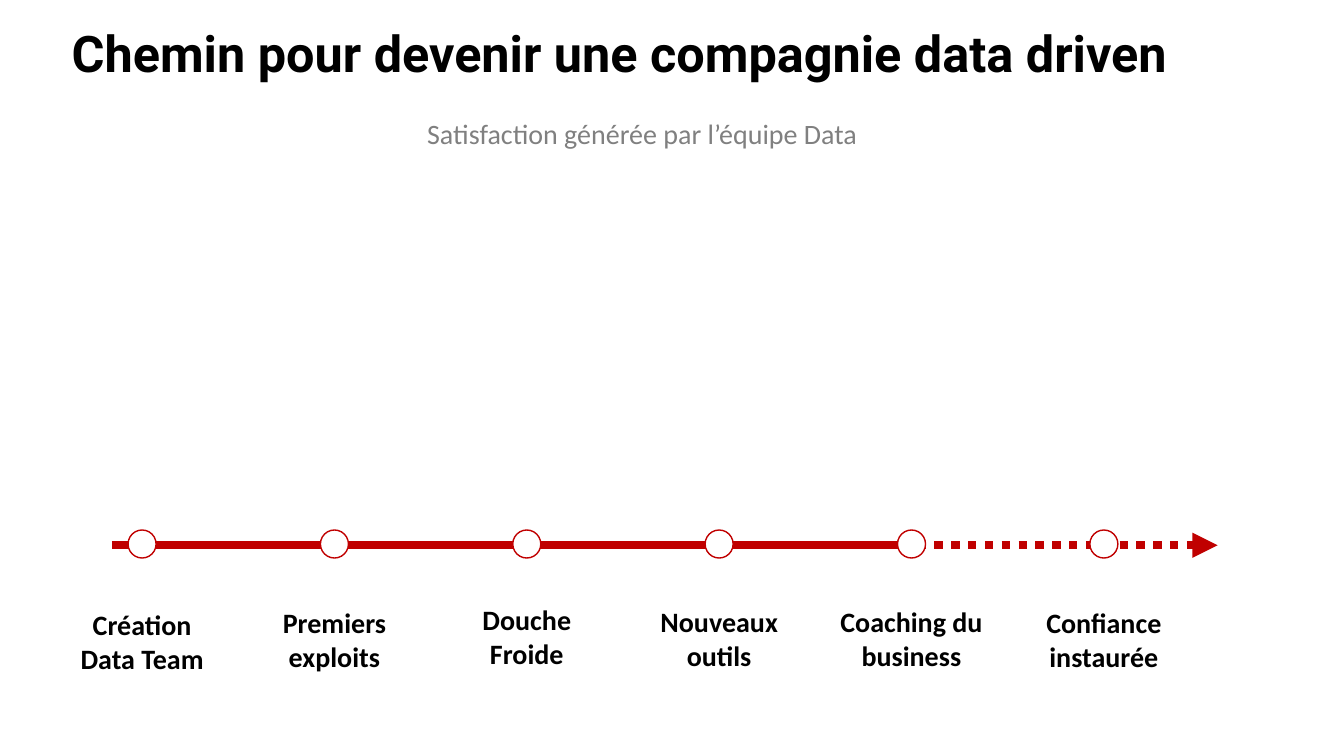
from dataclasses import dataclass

from lxml.etree import SubElement
from pptx import Presentation
from pptx.dml.color import RGBColor
from pptx.enum.dml import MSO_LINE
from pptx.enum.shapes import MSO_CONNECTOR, MSO_SHAPE
from pptx.enum.text import MSO_ANCHOR, MSO_AUTO_SIZE, PP_ALIGN
from pptx.oxml.ns import qn
from pptx.util import Pt


@dataclass(frozen=True)
class Theme:
    black: RGBColor = RGBColor(0x00, 0x00, 0x00)
    gray: RGBColor = RGBColor(0x80, 0x80, 0x80)
    red: RGBColor = RGBColor(0xC0, 0x00, 0x00)
    white: RGBColor = RGBColor(0xFF, 0xFF, 0xFF)
    title_font: str = "Roboto"
    body_font: str = "Calibri"
    title_size: int = 36
    body_size: int = 20


theme = Theme()


def write_text(shape, text, *, font=theme.body_font, size=theme.body_size,
               color=theme.black, bold=False, align=PP_ALIGN.CENTER):
    shape.text_frame.word_wrap = True
    paragraph = shape.text_frame.paragraphs[0]
    paragraph.alignment = align
    run = paragraph.add_run()
    run.text = text
    run.font.name = font
    run.font.size = Pt(size)
    run.font.bold = bold
    run.font.color.rgb = color


def add_axis(left, right):
    """Draw one horizontal section of the timeline."""
    axis = slide.shapes.add_connector(
        MSO_CONNECTOR.STRAIGHT, Pt(left), Pt(axis_y), Pt(right), Pt(axis_y))
    axis.line.color.rgb = theme.red
    axis.line.width = Pt(6)
    SubElement(axis._element.spPr, qn("a:effectLst"))
    return axis


presentation = Presentation()
presentation.slide_width = Pt(960)
presentation.slide_height = Pt(540)
slide = presentation.slides.add_slide(presentation.slide_layouts[5])

title = slide.shapes.title
title.left, title.top, title.width, title.height = Pt(44), Pt(17.3), Pt(828), Pt(61)
title.text_frame.vertical_anchor = MSO_ANCHOR.TOP
title.text_frame.auto_size = MSO_AUTO_SIZE.NONE
title.text_frame.paragraphs[0].line_spacing = 0.9
write_text(title, "Chemin pour devenir une compagnie data driven",
           font=theme.title_font, size=theme.title_size, bold=True,
           align=PP_ALIGN.LEFT)

subtitle = slide.shapes.add_textbox(Pt(279.4), Pt(80), Pt(358.6), Pt(31.6))
write_text(subtitle, "Satisfaction générée par l’équipe Data", color=theme.gray)

# Timeline: dotted future section first, solid section over it
axis_y = 389.5
future_axis = add_axis(631.4, 869.8)
future_axis.line.dash_style = MSO_LINE.ROUND_DOT
SubElement(future_axis.line._get_or_add_ln(), qn("a:tailEnd"), type="triangle")
add_axis(80, 644.4)

# Milestones: label, top of label, width of label
milestones = [
    ("Création Data Team", 430.6, 109.4),
    ("Premiers exploits", 429.1, 109.4),
    ("Douche Froide", 427, 109.4),
    ("Nouveaux outils", 428.4, 109.4),
    ("Coaching du business", 428.4, 127.4),
    ("Confiance instaurée", 429.1, 109.4),
]
first_center, step = 101.5, 137.4
dot_size, dot_top = 20, 378.6

for index, (label, label_top, label_width) in enumerate(milestones):
    center = first_center + index * step
    dot = slide.shapes.add_shape(
        MSO_SHAPE.OVAL, Pt(center - dot_size / 2), Pt(dot_top),
        Pt(dot_size), Pt(dot_size))
    dot.shadow.inherit = False
    dot.fill.solid()
    dot.fill.fore_color.rgb = theme.white
    dot.line.color.rgb = theme.red
    dot.line.width = Pt(1)

    label_box = slide.shapes.add_textbox(
        Pt(center - label_width / 2), Pt(label_top), Pt(label_width), Pt(55.7))
    write_text(label_box, label, bold=True)

presentation.save("out.pptx")
